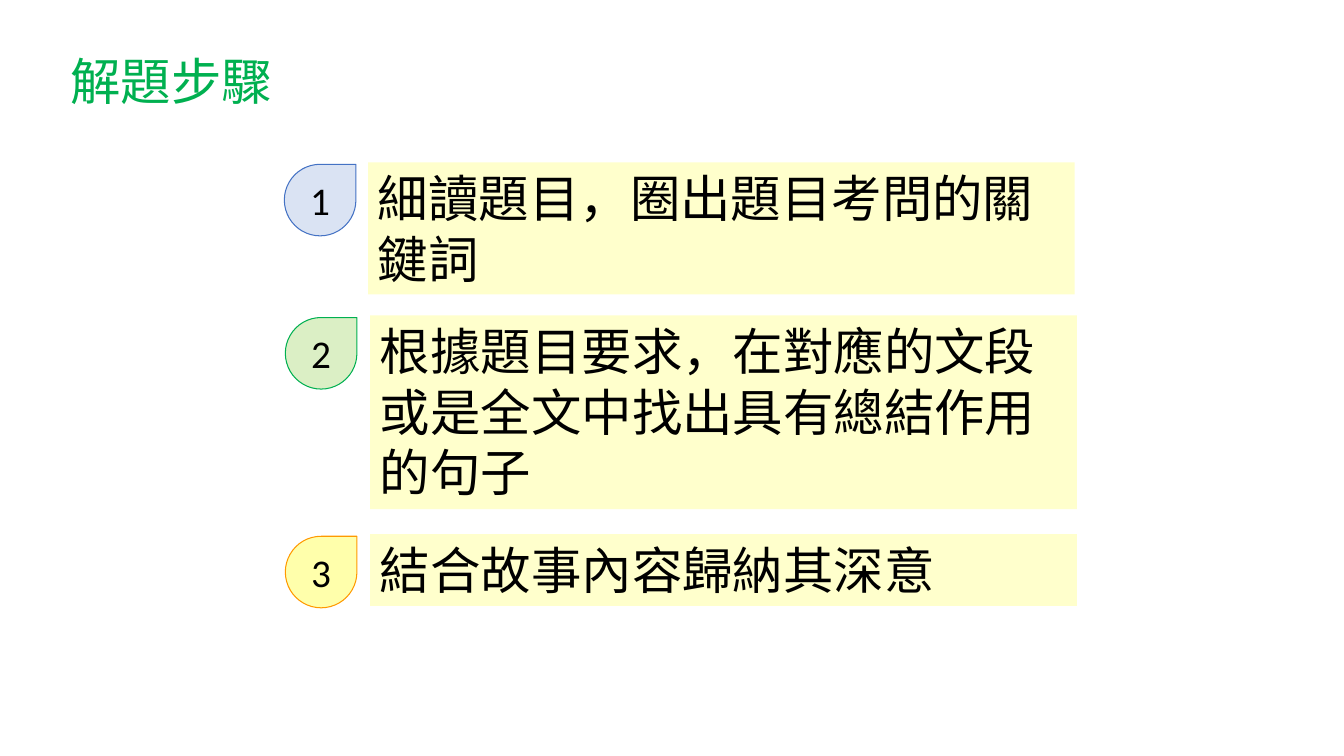
from lxml.etree import SubElement
from pptx import Presentation
from pptx.dml.color import RGBColor
from pptx.enum.shapes import MSO_SHAPE
from pptx.enum.text import MSO_ANCHOR, MSO_AUTO_SIZE, PP_ALIGN
from pptx.oxml.ns import qn
from pptx.util import Pt

PX = 9144  # 100 px to the inch
COLORS = {
    "title": "00B050", "text": "000000", "band": "FFFFCC",
    "blue": "8FAADC", "blue line": "4472C4",
    "green": "92D050", "green line": "00B050",
    "gold": "FFFF00", "gold line": "FF9900",
}
STEPS = [
    (282, 365, 161, 131, "blue", "細讀題目，圈出題目考問的關鍵詞"),
    (283, 367, 313, 192, "green", "根據題目要求，在對應的文段或是全文中找出具有總結作用的句子"),
    (283, 367, 530, 71, "gold", "結合故事內容歸納其深意"),
]


def color(name):
    return RGBColor.from_string(COLORS[name])


class Deck:
    def __init__(self):
        self.prs = Presentation()
        self.prs.slide_width, self.prs.slide_height = 1333 * PX, 750 * PX
        self.slide = self.prs.slides.add_slide(self.prs.slide_layouts[5])

    def label(self, shape, text, size, face, tint="text",
              align=PP_ALIGN.LEFT, anchor=MSO_ANCHOR.TOP):
        frame = shape.text_frame
        frame.text = text
        frame.word_wrap = True
        frame.auto_size = MSO_AUTO_SIZE.NONE
        frame.vertical_anchor = anchor
        para = frame.paragraphs[0]
        para.alignment = align
        font = para.font
        font.size, font.name = Pt(size), face
        font.color.rgb = color(tint)
        # East Asian glyphs take their face from a separate element
        props = para._p.pPr.find(qn("a:defRPr"))
        SubElement(props, qn("a:ea")).set("typeface", face)

    def title(self, text, x, y, w, h):
        head = self.slide.shapes.title
        head.left, head.top, head.width, head.height = (
            n * PX for n in (x, y, w, h))
        self.label(head, text, 36, "Noto Sans CJK SC", "title",
                   anchor=MSO_ANCHOR.MIDDLE)
        head.text_frame.word_wrap = False

    def shape(self, kind, x, y, w, h, fill):
        item = self.slide.shapes.add_shape(
            kind, *(n * PX for n in (x, y, w, h)))
        item.shadow.inherit = False
        item.fill.solid()
        item.fill.fore_color.rgb = color(fill)
        return item

    def band(self, text, x, y, w, h):
        item = self.shape(MSO_SHAPE.RECTANGLE, x, y, w, h, "band")
        item.line.fill.background()
        self.label(item, text, 36, "Lato")

    def drop(self, text, x, y, side, hue):
        item = self.shape(MSO_SHAPE.TEAR, x, y, side, side, hue)
        tint = item._element.spPr.find(qn("a:solidFill"))[0]
        SubElement(tint, qn("a:alpha")).set("val", "33000")
        item.line.color.rgb = color(hue + " line")
        item.line.width = Pt(0.75)
        self.label(item, text, 28, "Calibri", align=PP_ALIGN.CENTER,
                   anchor=MSO_ANCHOR.MIDDLE)


def main():
    deck = Deck()
    deck.title("解題步驟", 60, 44, 222, 71)
    for num, (left, edge, top, tall, hue, text) in enumerate(STEPS, 1):
        deck.band(text, edge, top, 701, tall)
        deck.drop(str(num), left, top + 2, 71, hue)
    deck.prs.save("out.pptx")


if __name__ == "__main__":
    main()
